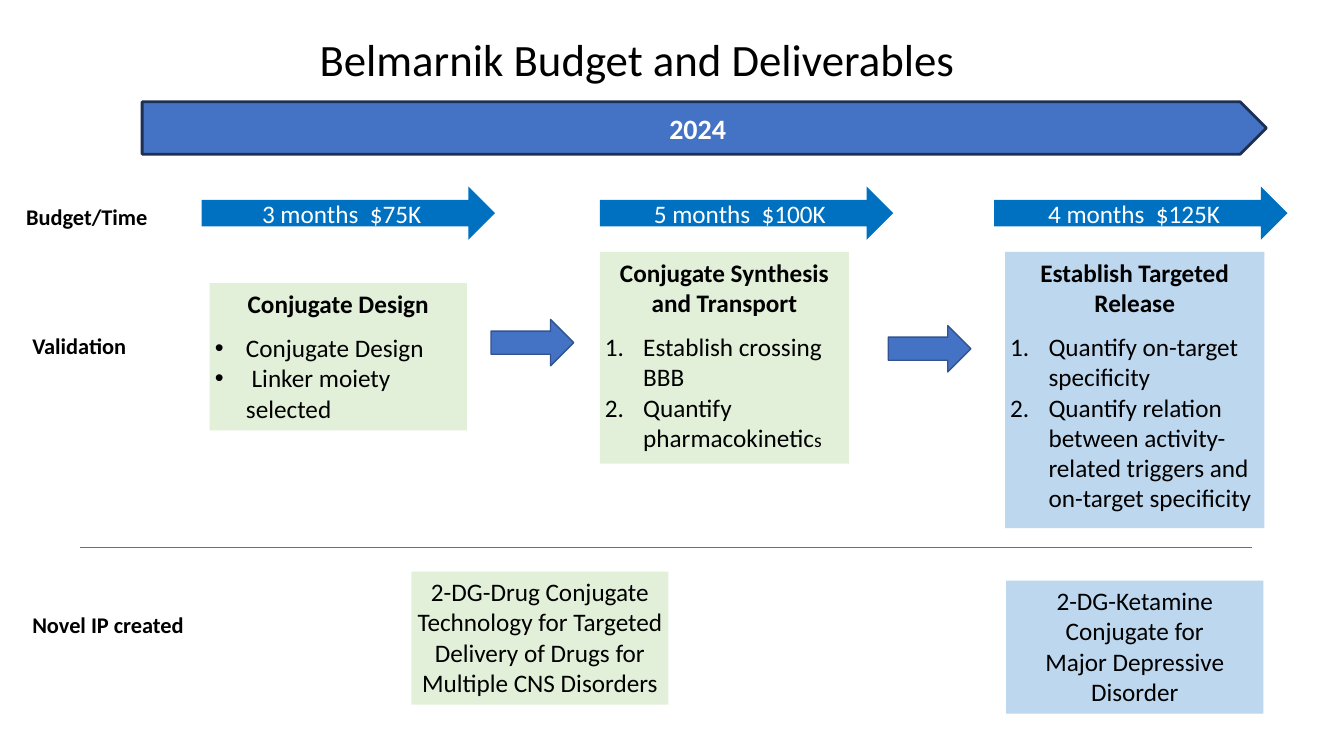
from lxml import etree
from pptx import Presentation
from pptx.dml.color import RGBColor
from pptx.enum.shapes import MSO_CONNECTOR, MSO_SHAPE
from pptx.enum.text import MSO_ANCHOR, PP_ALIGN
from pptx.oxml.ns import qn
from pptx.util import Inches, Pt

RECTANGLE, ARROW, PENTAGON = MSO_SHAPE.RECTANGLE, MSO_SHAPE.RIGHT_ARROW, MSO_SHAPE.PENTAGON
STRAIGHT = MSO_CONNECTOR.STRAIGHT
TOP, MIDDLE = MSO_ANCHOR.TOP, MSO_ANCHOR.MIDDLE
LEFT, CENTER = PP_ALIGN.LEFT, PP_ALIGN.CENTER
GREEN, PALE_BLUE, BLUE, BRIGHT_BLUE = "E2F0D9", "BDD7EE", "4472C4", "0070C0"
BLACK, WHITE = "000000", "FFFFFF"
rgb = RGBColor.from_string

deck = Presentation()
deck.slide_width, deck.slide_height = Inches(13.33), Inches(7.5)
page = deck.slides.add_slide(deck.slide_layouts[6])


def add_block(kind, at, fill, line=None, width=1):
    box = page.shapes.add_shape(kind, *map(Inches, at))
    box.shadow.inherit = False
    box.fill.solid()
    box.fill.fore_color.rgb = rgb(fill)
    if line:
        box.line.color.rgb = rgb(line)
        box.line.width = Pt(width)
    else:
        box.line.fill.background()
    return box


def write(box, text, size=18, color=BLACK, bold=False, align=CENTER, anchor=TOP,
          wrap=True, margin=0.05, after=0, spacing=1.0, bullet=None, indent=0):
    """Add one paragraph to the box, using the first one while it is empty."""
    frame = box.text_frame
    frame.word_wrap, frame.vertical_anchor = wrap, anchor
    frame.margin_left = frame.margin_right = Inches(0.05)
    frame.margin_top = frame.margin_bottom = Inches(margin)
    para = frame.paragraphs[0] if not frame.text else frame.add_paragraph()
    para.alignment, para.space_after, para.line_spacing = align, Pt(after), spacing
    if bullet:
        props = para._p.get_or_add_pPr()
        props.set("marL", str(Inches(indent)))
        props.set("indent", str(-Inches(indent)))
        if bullet == "number":
            etree.SubElement(props, qn("a:buAutoNum"), type="arabicPeriod")
        else:
            etree.SubElement(props, qn("a:buFont"), typeface="Arial")
            etree.SubElement(props, qn("a:buChar"), char=bullet)
    span = para.add_run()
    span.text = text
    span.font.name, span.font.size, span.font.bold = "Calibri", Pt(size), bold
    span.font.color.rgb = rgb(color)
    return para


# Title
title = page.shapes.add_textbox(Inches(0.22), Inches(0), Inches(12.2), Inches(1.24))
write(title, "Belmarnik Budget and Deliverables", size=32, anchor=MIDDLE, spacing=0.9)

# Year banner
banner = add_block(PENTAGON, (1.41, 1.01, 11.15, 0.52), BLUE, "1D3053", 2)
write(banner, "2024", size=20, color=WHITE, bold=True, anchor=MIDDLE)

# Row labels
for label, left, top, width in [("Budget/Time", 0.21, 1.97, 1.32),
                                ("Validation", 0.27, 3.25, 1.05),
                                ("Novel IP created", 0.27, 6.01, 1.62)]:
    box = page.shapes.add_textbox(Inches(left), Inches(top), Inches(width), Inches(0.33))
    write(box, label, size=16, bold=True, align=LEFT, wrap=False)

# Budget and time arrows
for budget, left in [("3 months  $75K", 2), ("5 months  $100K", 5.95), ("4 months  $125K", 9.86)]:
    arrow = add_block(ARROW, (left, 1.85, 2.91, 0.53), BRIGHT_BLUE)
    write(arrow, budget, color=WHITE, anchor=MIDDLE, margin=0)

# Validation cards
cards = [
    ((2.08, 2.81, 2.55, 1.46), GREEN, "Conjugate Design", "•", 0.31,
     ["Conjugate Design", " Linker moiety selected"]),
    ((5.95, 2.5, 2.47, 2.1), GREEN, "Conjugate Synthesis and Transport", "number", 0.38,
     ["Establish crossing BBB", "Quantify pharmacokinetic"]),
    ((9.97, 2.5, 2.57, 2.74), PALE_BLUE, "Establish Targeted Release", "number", 0.38,
     ["Quantify on-target specificity",
      "Quantify relation between activity-related triggers and on-target specificity"]),
]
for at, fill, heading, bullet, indent, items in cards:
    card = add_block(RECTANGLE, at, fill)
    write(card, heading, bold=True, after=10)
    for item in items:
        para = write(card, item, align=LEFT, bullet=bullet, indent=indent)
        if item.endswith("pharmacokinetic"):
            # The last letter is set smaller
            span = para.add_run()
            span.text = "s"
            span.font.name, span.font.size = "Calibri", Pt(14)
            span.font.color.rgb = rgb(BLACK)

# Arrows between the cards
for left, top in [(4.87, 3.17), (8.81, 3.23)]:
    add_block(ARROW, (left, top, 0.82, 0.46), BLUE, "32538F")

# Divider
divider = page.shapes.add_connector(STRAIGHT, Inches(0.79), Inches(5.43), Inches(12.42), Inches(5.43))
divider.line.color.rgb = rgb(BLUE)
divider.line.width = Pt(1)
etree.SubElement(divider._element.spPr, qn("a:effectLst"))

# Novel IP cards
for left, top, fill, lines in [
    (4.08, 5.67, GREEN, ["2-DG-Drug Conjugate",
                         "Technology for Targeted Delivery of Drugs for Multiple CNS Disorders"]),
    (9.98, 5.76, PALE_BLUE, ["2-DG-Ketamine Conjugate for", "Major Depressive", "Disorder"]),
]:
    card = add_block(RECTANGLE, (left, top, 2.55, 1.32), fill)
    for line in lines:
        write(card, line)

deck.save("out.pptx")
